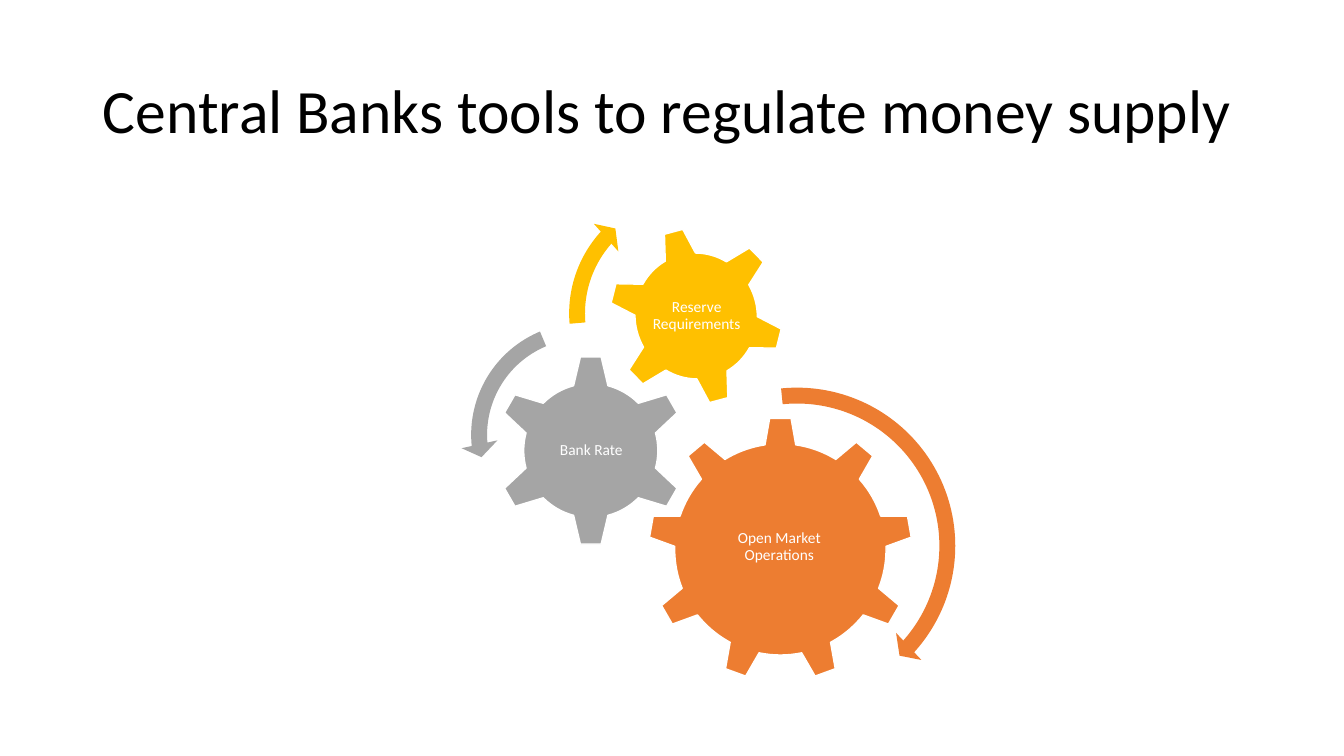
"""Builds a slide of three interlocking gears on central bank tools."""
from pptx import Presentation
from pptx.dml.color import RGBColor
from pptx.enum.shapes import MSO_SHAPE
from pptx.enum.text import MSO_ANCHOR, MSO_AUTO_SIZE, PP_ALIGN
from pptx.util import Inches, Pt

GEAR_6, GEAR_9 = MSO_SHAPE.GEAR_6, MSO_SHAPE.GEAR_9
ARROW, LEFT_ARROW = MSO_SHAPE.CIRCULAR_ARROW, MSO_SHAPE.LEFT_CIRCULAR_ARROW
MIDDLE, NO_FIT = MSO_ANCHOR.MIDDLE, MSO_AUTO_SIZE.NONE
LEFT, CENTER = PP_ALIGN.LEFT, PP_ALIGN.CENTER
TITLE_ONLY = 5
ORANGE, GRAY, YELLOW = "ED7D31", "A5A5A5", "FFC000"
WHITE, BLACK = "FFFFFF", "000000"

GEARS = [
    (GEAR_9, (6.43, 4.14, 2.62, 2.62), 0, ORANGE,
     "Open Market Operations", (6.95, 4.75, 1.56, 1.35)),
    (GEAR_6, (4.91, 3.52, 1.9, 1.9), 0, GRAY,
     "Bank Rate", (5.39, 4, 0.95, 0.94)),
    (GEAR_6, (6.04, 2.25, 1.73, 1.77), 345, YELLOW,
     "Reserve Requirements", (6.42, 2.64, 0.98, 0.99)),
]
ARROWS = [
    (ARROW, (6.23, 3.74, 3.35, 3.35), ORANGE, 4.7, (4.98, 42, 264.22), 5.5),
    (LEFT_ARROW, (4.57, 3.1, 2.43, 2.43), GRAY, 6.5, (7.17, 174.82, 247.3), 7.5),
    (ARROW, (5.54, 1.8, 2.62, 2.62), YELLOW, 6, (6.57, 221.9, 175.14), 7),
]


def color(hex_code):
    return RGBColor.from_string(hex_code)


def write(tf, text, size=11, fill=WHITE, align=CENTER, font="Calibri", after=0):
    tf.word_wrap = True
    tf.auto_size = NO_FIT
    tf.vertical_anchor = MIDDLE
    p = tf.paragraphs[0]
    p.alignment = align
    p.line_spacing = 0.9
    p.space_after = Pt(after)
    r = p.add_run()
    r.text = text
    r.font.name = font
    r.font.size = Pt(size)
    r.font.color.rgb = color(fill)


class GearSlide:
    """Holds the slide and its style, with a method for each kind of element."""

    label_inset = Inches(0.02)
    outline = Pt(1)

    def __init__(self, prs):
        self.s = prs.slides.add_slide(prs.slide_layouts[TITLE_ONLY])

    def title(self, text, box):
        sp = self.s.shapes.title
        sp.left, sp.top, sp.width, sp.height = map(Inches, box)
        write(sp.text_frame, text, size=44, fill=BLACK, align=LEFT)

    def shape(self, kind, box, fill):
        sp = self.s.shapes.add_shape(kind, *map(Inches, box))
        sp.shadow.inherit = False
        sp.fill.solid()
        sp.fill.fore_color.rgb = color(fill)
        sp.line.fill.background()
        return sp

    def gear(self, kind, box, rotation, fill):
        sp = self.shape(kind, box, fill)
        sp.rotation = rotation
        sp.line.color.rgb = color(WHITE)
        sp.line.width = self.outline

    def label(self, text, box):
        tf = self.s.shapes.add_textbox(*map(Inches, box)).text_frame
        tf.margin_left = tf.margin_right = self.label_inset
        tf.margin_top = tf.margin_bottom = self.label_inset
        write(tf, text, after=3.85)

    def arrow(self, kind, box, fill, thickness, degrees, head):
        sp = self.shape(kind, box, fill)
        angles = [degree * 0.6 for degree in degrees]
        for i, value in enumerate([thickness / 100, *angles, head / 100]):
            sp.adjustments[i] = value


def main():
    prs = Presentation()
    prs.slide_width, prs.slide_height = Inches(13.33), Inches(7.5)
    slide = GearSlide(prs)
    slide.title("Central Banks tools to regulate money supply",
                (0.92, 0.4, 11.5, 1.45))
    for kind, box, rotation, fill, text, text_box in GEARS:
        slide.gear(kind, box, rotation, fill)
        slide.label(text, text_box)
    for arrow in ARROWS:
        slide.arrow(*arrow)
    prs.save("out.pptx")


if __name__ == "__main__":
    main()
